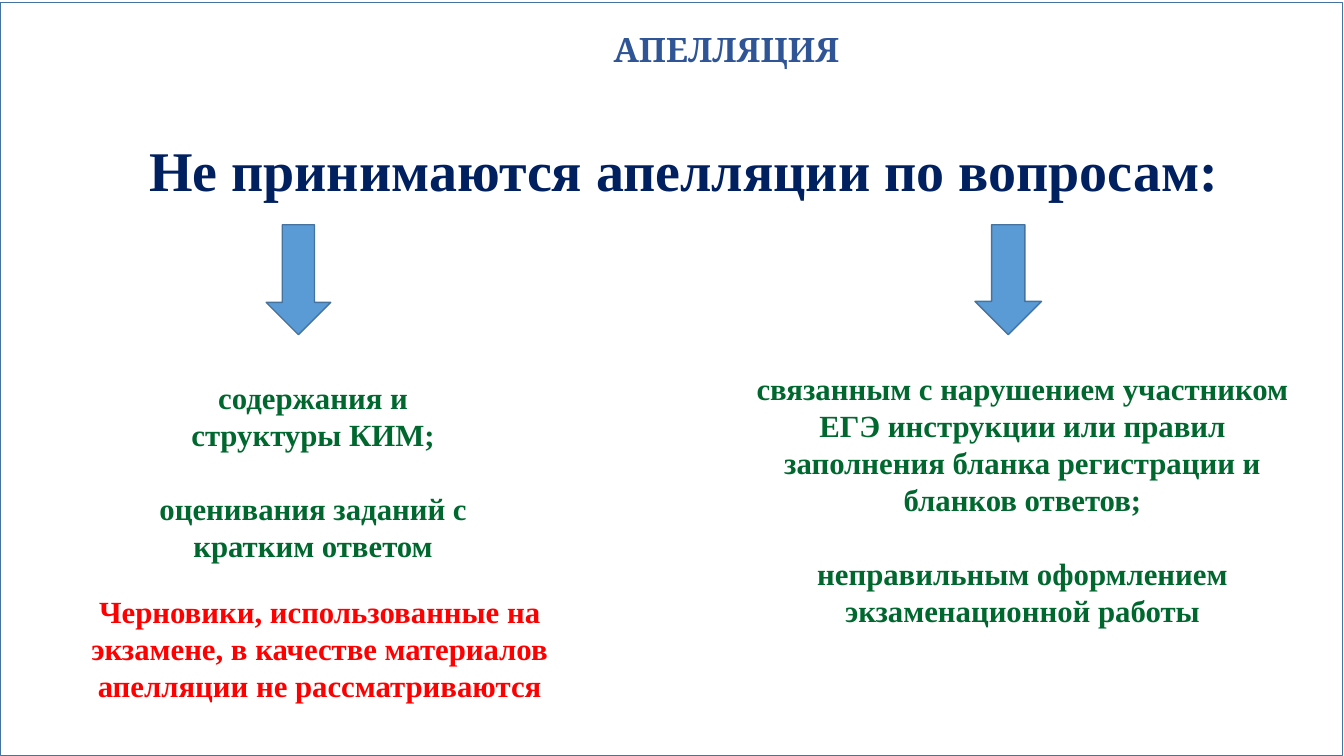
from pptx import Presentation
from pptx.dml.color import RGBColor
from pptx.enum import shapes, text
from pptx.util import Inches, Pt

COLORS = {
    "title": "2F5597",
    "head": "002060",
    "topic": "00682F",
    "alert": "FF0000",
    "arrow": "5B9BD5",
    "edge": "43739E",
}
SERIF = "Times New Roman"


def color(name):
    return RGBColor.from_string(COLORS[name])


def add_shape(slide, kind, box, width, fill=None):
    shape = slide.shapes.add_shape(kind, *map(Inches, box))
    shape.shadow.inherit = False
    if fill:
        shape.fill.solid()
        shape.fill.fore_color.rgb = color(fill)
    else:
        shape.fill.background()
    shape.line.color.rgb = color("edge")
    shape.line.width = Pt(width)


def add_text(slide, box, lines, size, tone, font=SERIF):
    frame = slide.shapes.add_textbox(*map(Inches, box)).text_frame
    frame.word_wrap = True
    for index, line in enumerate(lines):
        para = frame.add_paragraph() if index else frame.paragraphs[0]
        para.alignment = text.PP_ALIGN.CENTER
        if index:
            para.space_before = Pt(size * 1.2)
        run = para.add_run()
        run.text = line
        run.font.name = font
        run.font.size = Pt(size)
        run.font.bold = True
        run.font.color.rgb = color(tone)
    return frame


def add_title(slide, line):
    frame = add_text(slide, (1.34, 0.12, 11.73, 0.79), [line], 24, "title", "Cambria")
    frame.vertical_anchor = text.MSO_ANCHOR.MIDDLE
    frame.margin_left = frame.margin_right = Inches(0.03)
    frame.margin_top = frame.margin_bottom = Inches(0.03)
    frame.paragraphs[0].line_spacing = 0.9


def main():
    deck = Presentation()
    deck.slide_width, deck.slide_height = Inches(13.33), Inches(7.5)
    slide = deck.slides.add_slide(deck.slide_layouts[6])
    kinds = shapes.MSO_SHAPE

    add_shape(slide, kinds.RECTANGLE, (0, 0.02, 13.31, 7.47), 0.25)
    add_title(slide, "АПЕЛЛЯЦИЯ")
    add_text(slide, (0.72, 1.3, 12.12, 2.79),
             ["Не принимаются апелляции по вопросам:"], 40, "head")
    for left, width in ((2.64, 0.64), (9.67, 0.66)):
        add_shape(slide, kinds.DOWN_ARROW, (left, 2.23, width, 1.09), 1, "arrow")
    add_text(slide, (1.34, 3.71, 3.53, 1.95),
             ["содержания и структуры КИМ;",
              "оценивания заданий с кратким ответом"], 22, "topic")
    add_text(slide, (7.37, 3.62, 5.54, 2.69),
             ["связанным с нарушением участником ЕГЭ инструкции или правил "
              "заполнения бланка регистрации и бланков ответов;",
              "неправильным оформлением экзаменационной работы"], 22, "topic")
    add_text(slide, (0.67, 5.83, 5, 1.21),
             ["Черновики, использованные на экзамене, в качестве материалов "
              "апелляции не рассматриваются"], 22, "alert")
    deck.save("out.pptx")


if __name__ == "__main__":
    main()
